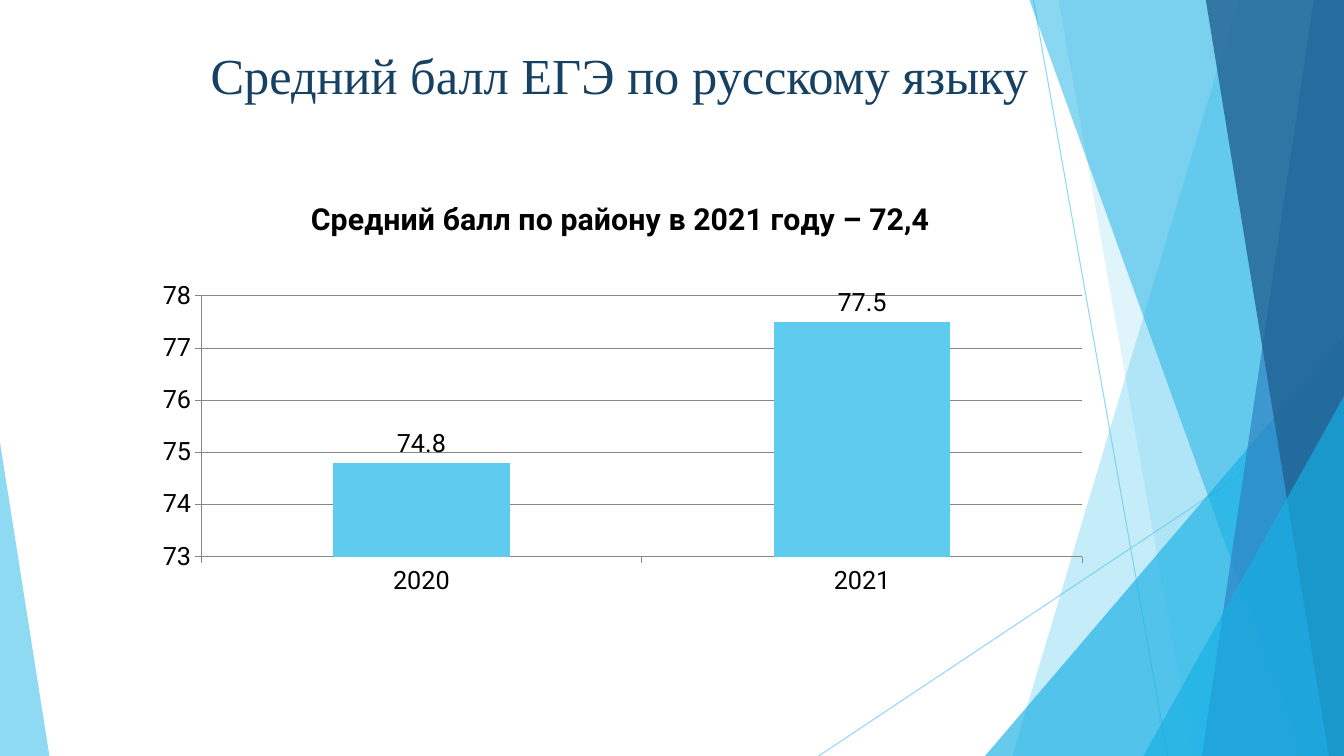
from lxml.etree import SubElement
from pptx import Presentation
from pptx.chart.data import CategoryChartData
from pptx.dml.color import RGBColor
from pptx.enum.chart import XL_CHART_TYPE, XL_LABEL_POSITION, XL_TICK_MARK
from pptx.enum.shapes import MSO_CONNECTOR, MSO_SHAPE
from pptx.enum.text import MSO_ANCHOR
from pptx.oxml import parse_xml
from pptx.oxml.ns import nsdecls, qn
from pptx.util import Inches, Pt

COLUMNS, ROWS = 13.33, 7.5
COLOURS = {
    "sky": "5FCBEF",
    "azure": "17B0E4",
    "blue": "2E83C3",
    "navy": "226292",
    "title": "174162",
    "text": "000000",
    "grid": "878787",
}


class SlideBuilder:
    """Draws styled elements on one slide, measured in one-inch columns and rows."""

    def __init__(self, presentation):
        presentation.slide_width = Inches(COLUMNS)
        presentation.slide_height = Inches(ROWS)
        self.column = presentation.slide_width / COLUMNS
        self.row = presentation.slide_height / ROWS
        self.slide = presentation.slides.add_slide(presentation.slide_layouts[6])
        self.shapes = self.slide.shapes

    def point(self, x, y):
        return round(x * self.column), round(y * self.row)

    def box(self, left, top, width, height):
        return *self.point(left, top), *self.point(width, height)

    def colour(self, name):
        return RGBColor.from_string(COLOURS[name])

    def set_opacity(self, shape, percent):
        for colour in shape.element.spPr.iter(qn("a:srgbClr")):
            SubElement(colour, qn("a:alpha")).set("val", str(percent * 1000))

    def paint(self, shape, colour, opacity):
        shape.shadow.inherit = False
        shape.fill.solid()
        shape.fill.fore_color.rgb = self.colour(colour)
        shape.line.fill.background()
        self.set_opacity(shape, opacity)

    def ray(self, start, end):
        line = self.shapes.add_connector(
            MSO_CONNECTOR.STRAIGHT, *self.point(*start), *self.point(*end))
        line.line.color.rgb = self.colour("sky")
        line.line.width = Pt(0.75)
        self.set_opacity(line, 70)
        SubElement(line.element.spPr, qn("a:effectLst"))

    def facet(self, top_x, bottom_x, colour, opacity):
        builder = self.shapes.build_freeform(*self.point(top_x, 0), scale=1.0)
        corners = [(COLUMNS, 0), (COLUMNS, ROWS), (bottom_x, ROWS)]
        builder.add_line_segments([self.point(*corner) for corner in corners], close=True)
        self.paint(builder.convert_to_shape(), colour, opacity)

    def corner(self, left, top, width, apex, colour, opacity):
        triangle = self.shapes.add_shape(
            MSO_SHAPE.ISOSCELES_TRIANGLE, *self.box(left, top, width, ROWS - top))
        triangle.adjustments[0] = apex
        self.paint(triangle, colour, opacity)

    def title(self, text, *box):
        frame = self.shapes.add_textbox(*self.box(*box)).text_frame
        frame.word_wrap = True
        frame.vertical_anchor = MSO_ANCHOR.TOP
        paragraph = frame.paragraphs[0]
        paragraph.text = text
        paragraph.font.name = "Times New Roman"
        paragraph.font.size = Pt(36)
        paragraph.font.color.rgb = self.colour("title")

    def layout(self, **settings):
        entries = "".join(f'<c:{key} val="{value}"/>' for key, value in settings.items())
        return parse_xml(f'<c:layout {nsdecls("c")}><c:manualLayout>{entries}'
                         "</c:manualLayout></c:layout>")

    def place(self, parent, **settings):
        for present in parent.findall(qn("c:layout")):
            parent.remove(present)
        index = 1 if parent.tag == qn("c:title") else 0
        parent.insert(index, self.layout(xMode="edge", yMode="edge", **settings))

    def column_chart(self, heading, series_name, values, *box):
        data = CategoryChartData()
        data.categories = list(values)
        data.add_series(series_name, list(values.values()))
        chart = self.shapes.add_chart(
            XL_CHART_TYPE.COLUMN_CLUSTERED, *self.box(*box), data).chart
        chart.font.name = "Roboto"
        chart.font.size = Pt(18)
        chart.font.color.rgb = self.colour("text")
        chart.has_legend = False

        chart.has_title = True
        paragraph = chart.chart_title.text_frame.paragraphs[0]
        paragraph.text = heading
        paragraph.font.name = "Roboto"
        paragraph.font.size = Pt(21.6)
        paragraph.font.bold = True
        paragraph.font.color.rgb = self.colour("text")
        self.place(chart.chart_title._element, x=0.17, y=0.04)

        plot = chart.plots[0]
        plot.gap_width = 150
        plot.vary_by_categories = False
        plot.has_data_labels = True
        plot.data_labels.show_value = True
        plot.data_labels.position = XL_LABEL_POSITION.OUTSIDE_END
        series_fill = plot.series[0].format.fill
        series_fill.solid()
        series_fill.fore_color.rgb = self.colour("sky")
        plot_area = chart.element.find(f'.//{qn("c:plotArea")}')
        self.place(plot_area, x=0.06, y=0.28, w=0.93, h=0.61)
        target = plot_area.find(f'.//{qn("c:manualLayout")}')
        target.insert(0, parse_xml(f'<c:layoutTarget {nsdecls("c")} val="inner"/>'))

        value_axis = chart.value_axis
        value_axis.minimum_scale, value_axis.maximum_scale = 73, 78
        value_axis.major_unit = 1
        value_axis.has_major_gridlines = True
        for axis in (chart.category_axis, value_axis):
            axis.major_tick_mark = XL_TICK_MARK.OUTSIDE
        for part in (chart.category_axis, value_axis, value_axis.major_gridlines):
            part.format.line.color.rgb = self.colour("grid")
            part.format.line.width = Pt(0.75)


def main():
    presentation = Presentation()
    builder = SlideBuilder(presentation)
    builder.ray((10.25, 0), (11.58, ROWS))
    builder.ray((COLUMNS, 4.03), (8.12, ROWS))
    builder.facet(12.28, 10.04, "sky", 36)
    builder.facet(10.5, 11.83, "sky", 20)
    builder.corner(9.77, 3.33, 3.56, 1, "azure", 66)
    builder.facet(10.21, 12.91, "azure", 50)
    builder.facet(13.03, 11.92, "blue", 70)
    builder.facet(11.96, 13.18, "navy", 80)
    builder.corner(11.34, 3.93, 1.99, 1, "azure", 66)
    builder.corner(0, 4.39, 0.49, 0, "sky", 70)
    builder.title("Средний балл ЕГЭ по русскому языку", 1.99, 0.39, 9.4, 1.44)
    builder.column_chart(
        "Средний балл по району в 2021 году – 72,4", "Series 1",
        {"2020": 74.8, "2021": 77.5}, 1.43, 1.75, 9.4, 4.24)
    presentation.save("out.pptx")


if __name__ == "__main__":
    main()
